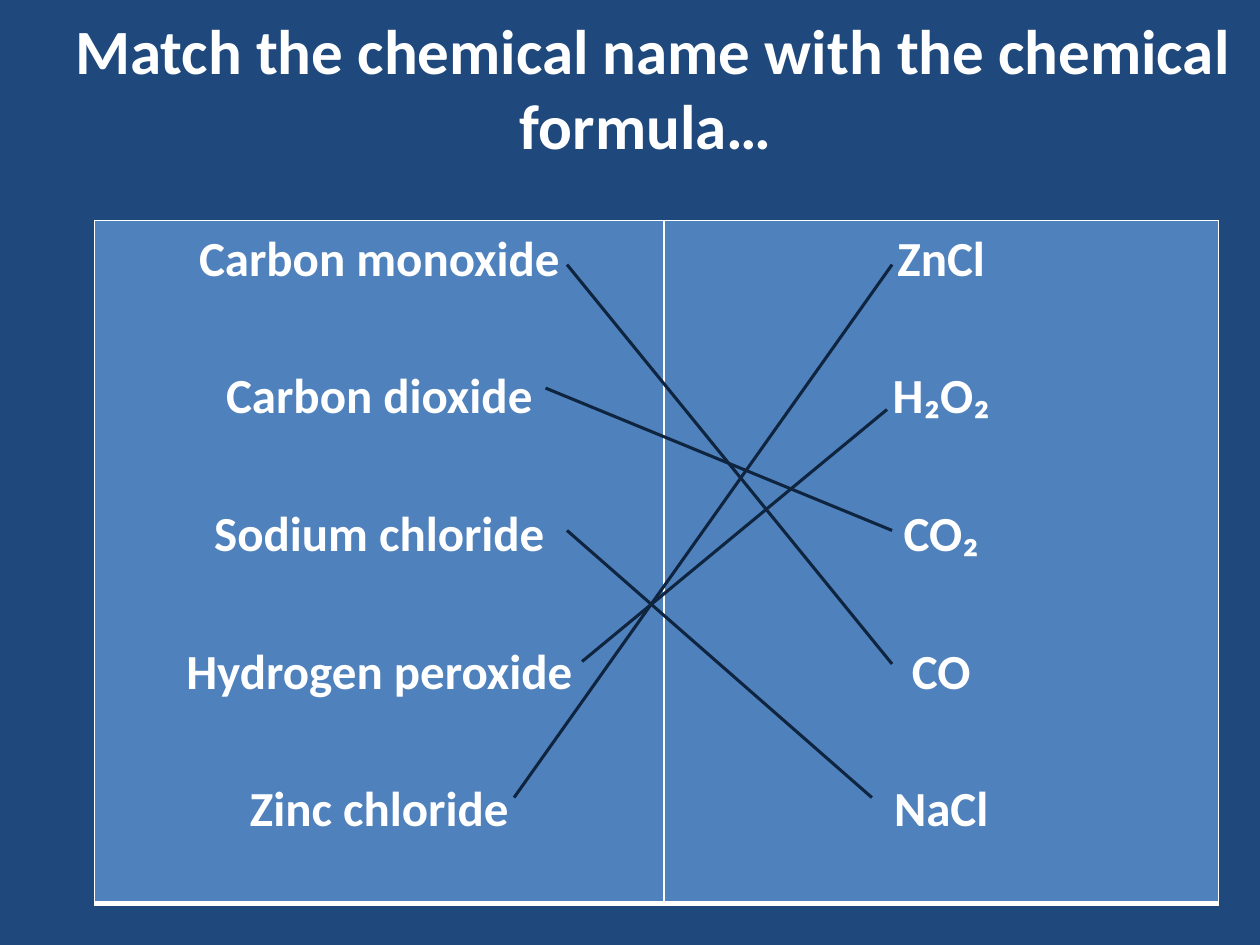
from lxml.etree import SubElement
from pptx import Presentation
from pptx.dml.color import RGBColor
from pptx.enum.shapes import MSO_CONNECTOR as Connector
from pptx.enum.text import MSO_ANCHOR as Anchor, PP_ALIGN as Align
from pptx.oxml.ns import qn
from pptx.util import Inches, Pt

NAVY = RGBColor(0x1F, 0x49, 0x7D)
BLUE = RGBColor(0x4F, 0x81, 0xBD)
INK = RGBColor(0x0F, 0x24, 0x3E)
WHITE = RGBColor(0xFF, 0xFF, 0xFF)

COLUMNS = [
    (4.52, ["Carbon monoxide", "Carbon dioxide", "Sodium chloride",
            "Hydrogen peroxide", "Zinc chloride"]),
    (4.4, ["ZnCl", "H₂O₂", "CO₂", "CO", "NaCl"]),
]
BORDERS = {"a:lnL": 1, "a:lnR": 1, "a:lnT": 1, "a:lnB": 3}
MATCHES = [
    ((4.5, 2.1), (7.08, 5.27)),
    ((4.08, 6.33), (7.08, 2.1)),
    ((4.62, 5.25), (7.04, 3.25)),
    ((4.33, 3.08), (7.08, 4.21)),
    ((4.5, 4.21), (6.92, 6.33)),
]


def write_text(text_frame, lines, size, line_spacing=1.0, gap=0):
    for index, line in enumerate(lines):
        paragraph = text_frame.paragraphs[0] if index == 0 else text_frame.add_paragraph()
        paragraph.alignment = Align.CENTER
        paragraph.line_spacing = line_spacing
        paragraph.space_after = Pt(gap if index < len(lines) - 1 else 0)
        run = paragraph.add_run()
        run.text = line
        run.font.name = "Calibri"
        run.font.size = Pt(size)
        run.font.bold = True
        run.font.color.rgb = WHITE


def add_title(slide, text):
    box = slide.shapes.add_textbox(Inches(0.25), Inches(0.04), Inches(9.75), Inches(1.92))
    box.text_frame.word_wrap = True
    box.text_frame.vertical_anchor = Anchor.TOP
    write_text(box.text_frame, [text], size=36)


def set_borders(cell):
    properties = cell._tc.get_or_add_tcPr()
    for position, (tag, width) in enumerate(BORDERS.items()):
        border = SubElement(properties, qn(tag), w=str(Pt(width)))
        fill = SubElement(border, qn("a:solidFill"))
        SubElement(fill, qn("a:srgbClr"), val=str(WHITE))
        properties.insert(position, border)


def add_match_table(slide):
    total_width = sum(width for width, _ in COLUMNS)
    frame = slide.shapes.add_table(1, len(COLUMNS), Inches(0.75), Inches(1.75),
                                   Inches(total_width), Inches(5.42))
    table = frame.table
    for index, (width, names) in enumerate(COLUMNS):
        table.columns[index].width = Inches(width)
        cell = table.cell(0, index)
        cell.margin_left = cell.margin_right = Inches(0.07)
        cell.margin_top = cell.margin_bottom = 0
        cell.vertical_anchor = Anchor.TOP
        cell.fill.solid()
        cell.fill.fore_color.rgb = BLUE
        set_borders(cell)
        write_text(cell.text_frame, names, size=28, line_spacing=1.15, gap=39.35)


def add_match_line(shapes, start, end):
    line = shapes.add_connector(Connector.STRAIGHT, *map(Inches, start + end))
    line.line.color.rgb = INK
    line.line.width = Pt(1.75)
    SubElement(line._element.spPr, qn("a:effectLst"))


def main():
    presentation = Presentation()
    presentation.slide_width = Inches(10)
    presentation.slide_height = Inches(7.5)
    slide = presentation.slides.add_slide(presentation.slide_layouts[6])
    slide.background.fill.solid()
    slide.background.fill.fore_color.rgb = NAVY
    add_match_table(slide)
    add_title(slide, " Match the chemical name with the chemical formula…")
    group = slide.shapes.add_group_shape()
    for start, end in MATCHES:
        add_match_line(group.shapes, start, end)
    presentation.save("out.pptx")


if __name__ == "__main__":
    main()
